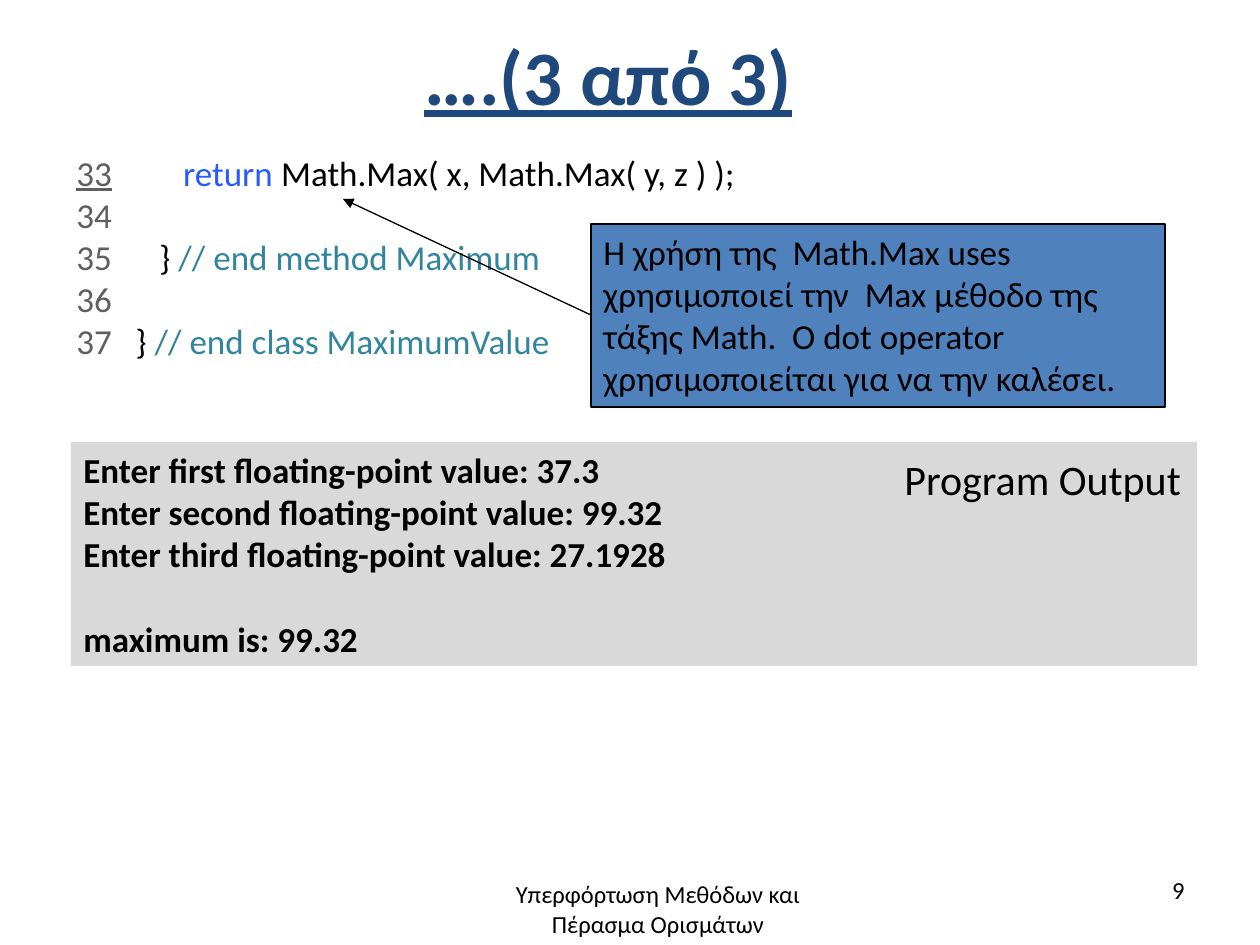
from lxml import etree
from pptx import Presentation
from pptx.dml.color import RGBColor
from pptx.enum.shapes import MSO_CONNECTOR, MSO_SHAPE
from pptx.enum.text import MSO_ANCHOR, PP_ALIGN
from pptx.oxml.ns import qn
from pptx.util import Pt

LEFT, CENTER, RIGHT = PP_ALIGN.LEFT, PP_ALIGN.CENTER, PP_ALIGN.RIGHT
TOP, MIDDLE = MSO_ANCHOR.TOP, MSO_ANCHOR.MIDDLE
STRAIGHT, RECTANGLE = MSO_CONNECTOR.STRAIGHT, MSO_SHAPE.RECTANGLE

SCALE = 914400 / 126  # EMU in one px
FONT = "Calibri"
COLORS = {
    "title": "1F497D",
    "number": "5F5F5F",
    "keyword": "275AFF",
    "comment": "31859C",
    "text": "000000",
    "output": "D9D9D9",
    "callout": "4F81BD",
}


def px(value):
    return round(value * SCALE)


def color(name):
    return RGBColor.from_string(COLORS[name])


def write(shape, lines, align=LEFT, anchor=TOP, wrap=True, **formats):
    """Fill a shape with lines, each a list of (text, colour name, own formats)."""
    frame = shape.text_frame
    frame.word_wrap = wrap
    frame.vertical_anchor = anchor
    for index, line in enumerate(lines):
        para = frame.paragraphs[0] if index == 0 else frame.add_paragraph()
        para.alignment = align
        for text, color_name, own in line:
            span = para.add_run()
            span.text = text
            for name, value in {"name": FONT, **formats, **own}.items():
                setattr(span.font, name, value)
            span.font.color.rgb = color(color_name)
    return frame


def plain(*texts, color_name="text"):
    return [[(text, color_name, {})] for text in texts]


def add_text(page, box, lines, **options):
    shape = page.shapes.add_textbox(*map(px, box))
    return write(shape, lines, **options)


def add_panel(page, box, fill, lines, outlined=False, **options):
    shape = page.shapes.add_shape(RECTANGLE, *map(px, box))
    shape.shadow.inherit = False
    shape.fill.solid()
    shape.fill.fore_color.rgb = color(fill)
    if outlined:
        shape.line.color.rgb = color("text")
        shape.line.width = Pt(0.75)
    else:
        shape.line.fill.background()
    return write(shape, lines, **options)


def add_arrow(page, start, end):
    arrow = page.shapes.add_connector(STRAIGHT, *map(px, (*start, *end)))
    arrow.line.color.rgb = color("text")
    arrow.line.width = Pt(0.75)
    etree.SubElement(arrow.line._get_or_add_ln(), qn("a:tailEnd"), type="triangle")
    etree.SubElement(arrow._element.spPr, qn("a:effectLst"))


def add_code(page, box):
    lines = [
        [("33", "number", {"underline": True}),
         ("         return ", "keyword", {}),
         ("Math.Max( x, Math.Max( y, z ) );", "text", {})],
        [("34", "number", {})],
        [("35   ", "number", {}), ("   } ", "text", {}),
         ("// end method Maximum", "comment", {})],
        [("36", "number", {})],
        [("37   ", "number", {}), ("} ", "text", {}),
         ("// end class MaximumValue", "comment", {})],
    ]
    add_text(page, box, lines, size=Pt(20))


def add_output(page, box):
    left, top, width, height = box
    lines = plain(
        "Enter first floating-point value: 37.3",
        "Enter second floating-point value: 99.32",
        "Enter third floating-point value: 27.1928",
        "maximum is: 99.32",
    )
    frame = add_panel(page, box, "output", lines, anchor=MIDDLE, size=Pt(20), bold=True)
    frame.paragraphs[-1].space_before = Pt(24)  # one line of gap before the result
    label_width = 305
    label = (left + width - label_width, top + 5, label_width, 63)
    add_text(page, label, plain("Program Output"), wrap=False, size=Pt(24))


def add_callout(page, box, target):
    left, top, width, height = box
    text = ("Η χρήση της  Math.Max uses χρησιμοποιεί την  Max μέθοδο της "
            "τάξης Math.  Ο dot operator χρησιμοποιείται για να την καλέσει.")
    add_panel(page, box, "callout", plain(text), outlined=True, size=Pt(20))
    add_arrow(page, (left, top + height // 2), target)


def add_footer(page, box):
    left, top, width, height = box
    add_text(page, (left, top + 4, 440, height),
             plain("Υπερφόρτωση Μεθόδων και", "Πέρασμα Ορισμάτων"),
             align=CENTER, size=Pt(14))
    number_width = 294
    add_text(page, (left + width - number_width, top, number_width, 50),
             plain("9"), align=RIGHT, size=Pt(14))


def main():
    deck = Presentation()
    deck.slide_width, deck.slide_height = px(1260), px(945)
    page = deck.slides.add_slide(deck.slide_layouts[6])

    # Title
    add_text(page, (73, -4, 1071, 158), plain("….(3 από 3)", color_name="title"),
             align=CENTER, anchor=MIDDLE, size=Pt(44), bold=True, underline=True)
    # Code listing, its output and the note on the call
    add_code(page, (64, 145, 1133, 224))
    add_output(page, (71, 442, 1126, 224))
    add_callout(page, (591, 224, 574, 183), target=(343, 199))
    # Footer and page number
    add_footer(page, (438, 869, 759, 69))

    deck.save("out.pptx")


if __name__ == "__main__":
    main()
